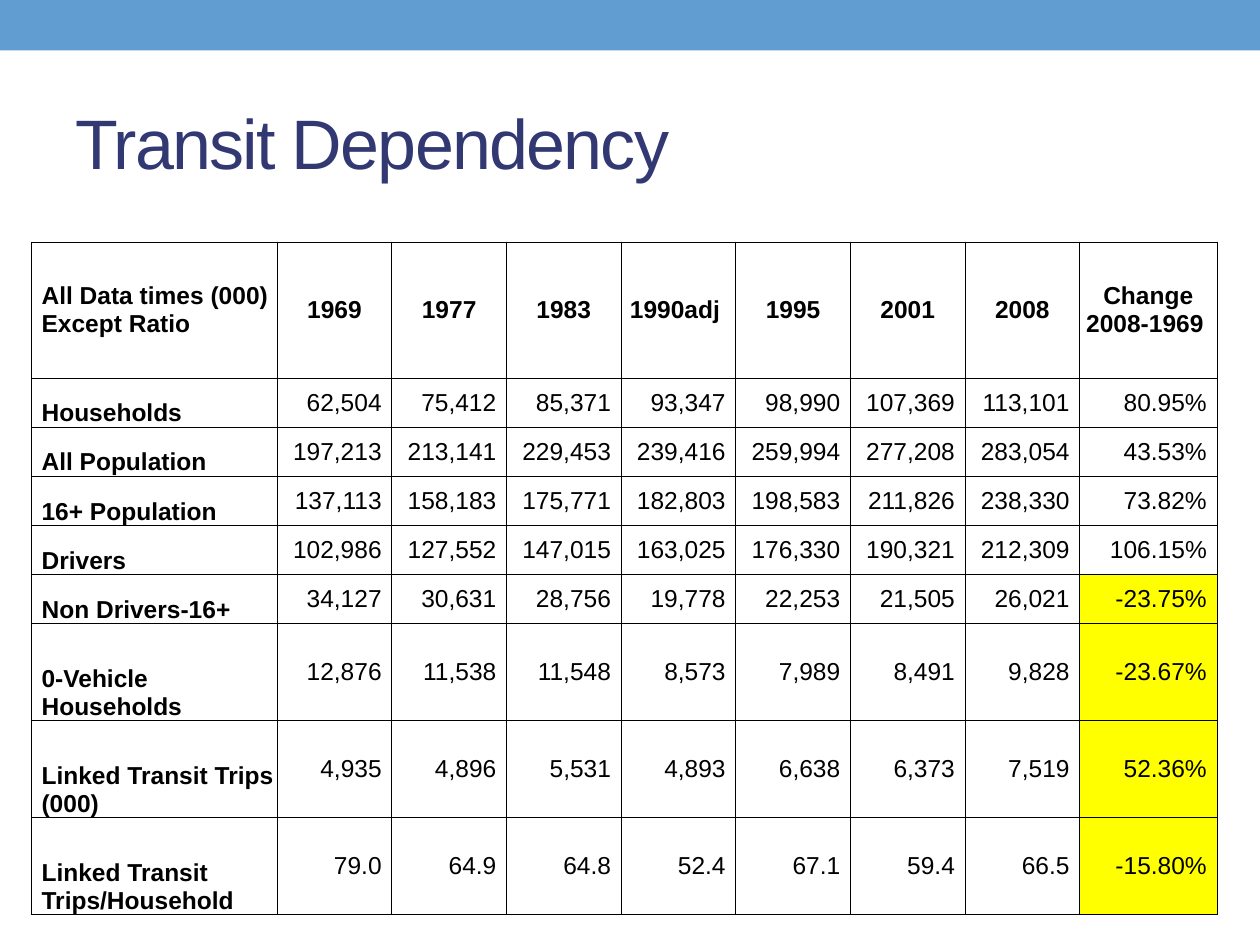
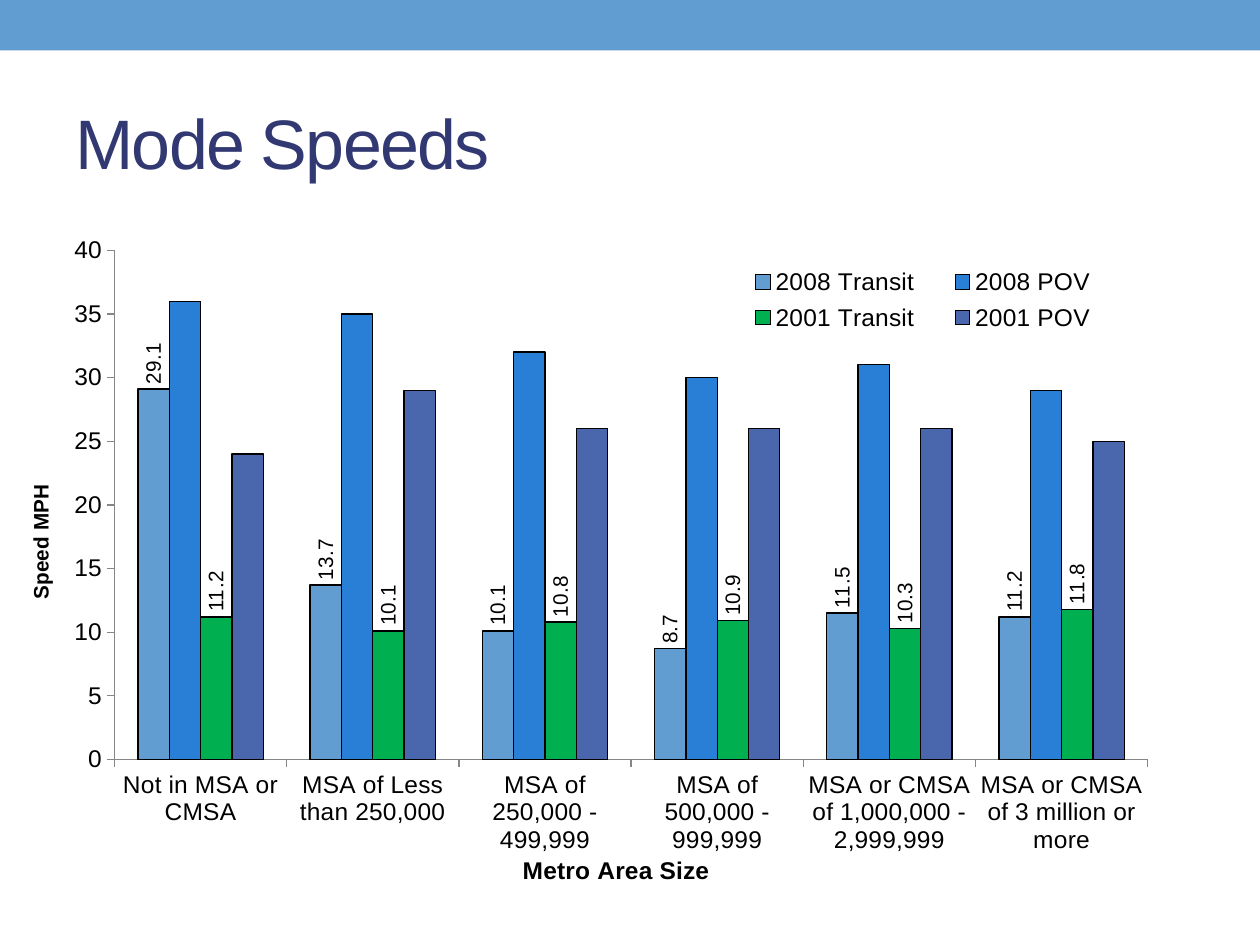
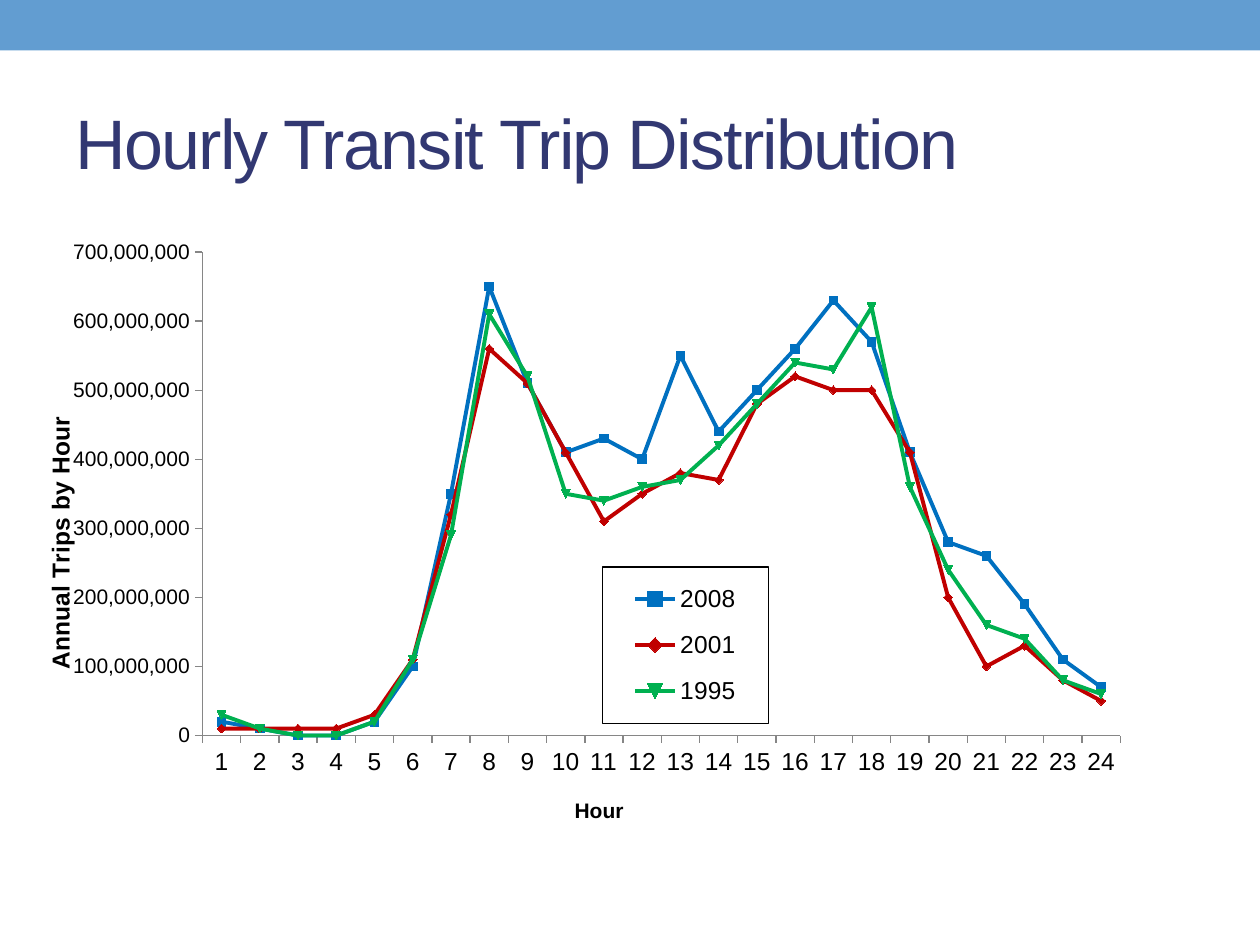
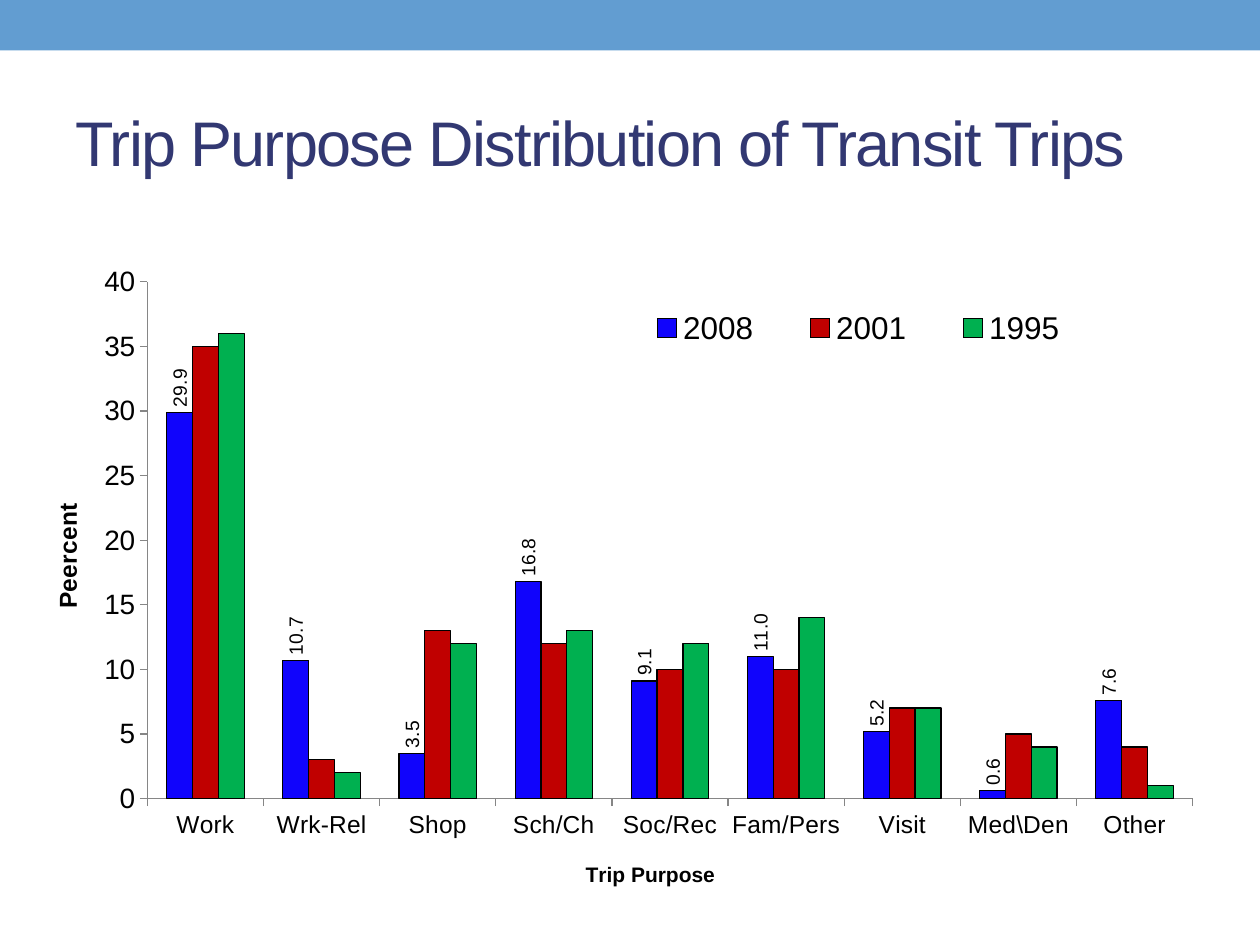
from dataclasses import dataclass
from typing import Any, Optional

from lxml import etree
from pptx import Presentation
from pptx.chart.data import CategoryChartData
from pptx.dml.color import RGBColor
from pptx.enum.chart import XL_CHART_TYPE, XL_LABEL_POSITION, XL_LEGEND_POSITION, XL_TICK_MARK
from pptx.enum.shapes import MSO_SHAPE
from pptx.enum.text import MSO_ANCHOR, PP_ALIGN
from pptx.oxml import parse_xml
from pptx.oxml.ns import nsdecls, qn
from pptx.util import Inches, Pt

COLUMNS = XL_CHART_TYPE.COLUMN_CLUSTERED
LINES = XL_CHART_TYPE.LINE_MARKERS
OUTSIDE_END = XL_LABEL_POSITION.OUTSIDE_END
LEGEND_RIGHT = XL_LEGEND_POSITION.RIGHT
TICK_OUT, TICK_NONE = XL_TICK_MARK.OUTSIDE, XL_TICK_MARK.NONE
RECT = MSO_SHAPE.RECTANGLE
MIDDLE, BOTTOM = MSO_ANCHOR.MIDDLE, MSO_ANCHOR.BOTTOM
LEFT, CENTER, RIGHT = PP_ALIGN.LEFT, PP_ALIGN.CENTER, PP_ALIGN.RIGHT
UPRIGHT = "-5400000"
MILLION = 1_000_000

Box = tuple[float, float, float, float]


@dataclass(frozen=True)
class Theme:
    font: str = "Arial"
    band: str = "629DD1"
    title: str = "323872"
    ink: str = "000000"
    paper: str = "FFFFFF"
    highlight: str = "FFFF00"
    axis: str = "868686"
    sky: str = "629DD1"
    blue: str = "297FD5"
    indigo: str = "4A66AC"
    green: str = "00B050"
    red: str = "C00000"
    ocean: str = "0070C0"
    violet: str = "1004FC"
    title_size: int = 40
    long_title_size: int = 36
    table_size: int = 14
    chart_size: int = 10


THEME = Theme()


@dataclass(frozen=True)
class Series:
    name: str
    color: str
    values: list[float]
    label_size: Optional[int] = None


@dataclass(frozen=True)
class Axis:
    title: str
    title_size: int
    title_at: tuple[float, float]  # percent of the chart
    label_size: int


@dataclass(frozen=True)
class ChartPlan:
    kind: Any
    at: Box  # inches
    plot: Box  # percent of the chart
    legend: Box  # percent of the chart
    legend_size: int
    cat_axis: Axis
    val_axis: Axis
    top: float
    step: float
    categories: list[str]
    series: list[Series]
    filled: bool = True
    boxed_legend: bool = False


# Shared helpers
def rgb(code: str) -> RGBColor:
    return RGBColor.from_string(code)


def apply(target: Any, formats: dict[str, Any]) -> None:
    for name, value in formats.items():
        setattr(target, name, value)


def style_font(font: Any, size: int, color: str = THEME.ink, bold: bool = False) -> None:
    apply(font, {"name": THEME.font, "size": Pt(size), "bold": bold})
    font.color.rgb = rgb(color)


def add_frame(prs: Any, title: str, size: int = THEME.title_size) -> Any:
    """Add a slide with the top band and the title."""
    s = prs.slides.add_slide(prs.slide_layouts[6])
    band = s.shapes.add_shape(RECT, 0, 0, prs.slide_width, Inches(0.4))
    band.shadow.inherit = False
    band.fill.solid()
    band.fill.fore_color.rgb = rgb(THEME.band)
    band.line.fill.background()

    sp = s.shapes.add_textbox(Inches(0.5), Inches(0.58), Inches(9), Inches(1.08))
    tf = sp.text_frame
    apply(tf, {"word_wrap": True, "vertical_anchor": MIDDLE})
    r = tf.paragraphs[0].add_run()
    r.text = title
    style_font(r.font, size, THEME.title)
    r.font._element.set("spc", "-100")
    return s


# Table
def add_borders(cell: Any) -> None:
    tc_pr = cell._tc.get_or_add_tcPr()
    for i, side in enumerate(("lnL", "lnR", "lnT", "lnB")):
        tc_pr.insert(i, parse_xml(
            f'<a:{side} {nsdecls("a")} w="6350"><a:solidFill>'
            f'<a:srgbClr val="{THEME.ink}"/></a:solidFill></a:{side}>'))


def fill_cell(cell: Any, text: str, row: int, col: int, highlight: bool) -> None:
    is_label, is_head = col == 0, row == 0
    is_number = not (is_label or is_head)
    apply(cell, {
        "margin_left": Inches(0.08 if is_label else 0),
        "margin_right": Inches(0.08 if is_number else 0),
        "margin_top": 0,
        "margin_bottom": 0,
        "vertical_anchor": BOTTOM if is_label and not is_head else MIDDLE,
    })
    p = cell.text_frame.paragraphs[0]
    p.alignment = LEFT if is_label else CENTER if is_head else RIGHT
    r = p.add_run()
    r.text = text
    style_font(r.font, THEME.table_size, bold=not is_number)
    if highlight:
        cell.fill.solid()
        cell.fill.fore_color.rgb = rgb(THEME.highlight)
    else:
        cell.fill.background()
    add_borders(cell)


def add_data_table(s: Any, rows: list[list[str]], widths: list[float],
                   heights: list[float], first_highlight: int) -> None:
    table = s.shapes.add_table(len(rows), len(widths), Inches(0.25), Inches(1.92),
                               Inches(sum(widths)), Inches(sum(heights))).table
    apply(table, {"first_row": False, "horz_banding": False})
    for column, width in zip(table.columns, widths):
        column.width = Inches(width)
    for i, (texts, height) in enumerate(zip(rows, heights)):
        table.rows[i].height = Inches(height)
        for j, text in enumerate(texts):
            highlight = i >= first_highlight and j == len(widths) - 1
            fill_cell(table.cell(i, j), text, i, j, highlight)


# Charts
def set_layout(parent: Any, index: int, percents: tuple[float, ...], inner: bool = False) -> None:
    """Place a chart part by hand; percents are x, y and, if given, w, h."""
    for old in parent.findall(qn("c:layout")):
        parent.remove(old)
    layout = parse_xml(f'<c:layout {nsdecls("c")}><c:manualLayout/></c:layout>')
    values = [("layoutTarget", "inner")] if inner else []
    values += [("xMode", "edge"), ("yMode", "edge")]
    values += [(name, str(round(pc / 100, 3))) for name, pc in zip("xywh", percents)]
    for name, value in values:
        etree.SubElement(layout[0], qn(f"c:{name}")).set("val", value)
    parent.insert(index, layout)


def shape_props(fill: Optional[str], line: Optional[str]) -> Any:
    def paint(code: Optional[str]) -> str:
        if code is None:
            return "<a:noFill/>"
        return f'<a:solidFill><a:srgbClr val="{code}"/></a:solidFill>'
    return parse_xml(f'<c:spPr {nsdecls("c", "a")}>{paint(fill)}'
                     f'<a:ln w="9525">{paint(line)}</a:ln></c:spPr>')


def style_axis(axis: Any, plan: Axis, upright: bool) -> None:
    apply(axis, {"has_major_gridlines": False, "has_minor_gridlines": False,
                 "major_tick_mark": TICK_OUT, "minor_tick_mark": TICK_NONE})
    style_font(axis.tick_labels.font, plan.label_size)
    axis.format.line.color.rgb = rgb(THEME.axis)
    axis.format.line.width = Pt(0.75)
    title = axis.axis_title
    tf = title.text_frame
    tf.text = plan.title
    style_font(tf.paragraphs[0].runs[0].font, plan.title_size, bold=True)
    if upright:
        body = tf._txBody.find(qn("a:bodyPr"))
        body.set("rot", UPRIGHT)
        body.set("vert", "horz")
    set_layout(title._element, 1, plan.title_at)


def style_series(ser: Any, plan: Series, is_line: bool) -> None:
    color = rgb(plan.color)
    if is_line:
        ser.smooth = False
        ser.format.line.color.rgb = color
        ser.marker.size = 5
        shades = [ser.marker.format.fill]
        ser.marker.format.line.color.rgb = color
    else:
        ser.invert_if_negative = False
        shades = [ser.format.fill]
        ser.format.line.color.rgb = rgb(THEME.ink)
        ser.format.line.width = Pt(0.75)
    for fill in shades:
        fill.solid()
        fill.fore_color.rgb = color
    if plan.label_size:
        labels = ser.data_labels
        apply(labels, {"show_value": True, "number_format": "#,##0.0",
                       "number_format_is_linked": False, "position": OUTSIDE_END})
        style_font(labels.font, plan.label_size)
        body = labels._element.find(qn("c:txPr")).find(qn("a:bodyPr"))
        body.set("rot", UPRIGHT)
        body.set("vert", "horz")


def add_data_chart(s: Any, plan: ChartPlan) -> None:
    data = CategoryChartData(number_format="General")
    data.categories = plan.categories
    for item in plan.series:
        data.add_series(item.name, item.values)
    chart = s.shapes.add_chart(plan.kind, *map(Inches, plan.at), data).chart
    chart.has_title = False
    style_font(chart.font, THEME.chart_size)
    paper = THEME.paper if plan.filled else None
    chart._chartSpace.find(qn("c:chart")).addnext(shape_props(paper, None))

    plot = chart.plots[0]
    plot.vary_by_categories = False
    is_line = plan.kind == LINES
    if not is_line:
        apply(plot, {"gap_width": 150, "overlap": 0})
    for ser, item in zip(plot.series, plan.series):
        style_series(ser, item, is_line)
    set_layout(chart._chartSpace.chart.plotArea, 0, plan.plot, inner=True)

    style_axis(chart.category_axis, plan.cat_axis, upright=False)
    style_axis(chart.value_axis, plan.val_axis, upright=True)
    apply(chart.value_axis, {"minimum_scale": 0, "maximum_scale": plan.top,
                             "major_unit": plan.step})
    apply(chart.value_axis.tick_labels, {"number_format": "#,##0",
                                         "number_format_is_linked": False})

    chart.has_legend = True
    legend = chart.legend
    apply(legend, {"position": LEGEND_RIGHT, "include_in_layout": False})
    style_font(legend.font, plan.legend_size)
    set_layout(legend._element, 1, plan.legend)
    if plan.boxed_legend:
        legend._element.find(qn("c:txPr")).addprevious(shape_props(THEME.paper, THEME.ink))


# Slide content
DEPENDENCY_ROWS = [line.split("|") for line in (
    "All Data times (000) Except Ratio|1969|1977|1983|1990adj |1995|2001|2008|Change 2008-1969 ",
    "Households|62,504|75,412|85,371|93,347|98,990|107,369|113,101|80.95%",
    "All Population|197,213|213,141|229,453|239,416|259,994|277,208|283,054|43.53%",
    "16+ Population|137,113|158,183|175,771|182,803|198,583|211,826|238,330|73.82%",
    "Drivers|102,986|127,552|147,015|163,025|176,330|190,321|212,309|106.15%",
    "Non Drivers-16+|34,127|30,631|28,756|19,778|22,253|21,505|26,021|-23.75%",
    "0-Vehicle Households|12,876|11,538|11,548|8,573|7,989|8,491|9,828|-23.67%",
    "Linked Transit Trips (000)|4,935|4,896|5,531|4,893|6,638|6,373|7,519|52.36%",
    "Linked Transit Trips/Household|79.0|64.9|64.8|52.4|67.1|59.4|66.5|-15.80%",
)]
DEPENDENCY_WIDTHS = [1.95] + [0.91] * 7 + [1.09]
DEPENDENCY_HEIGHTS = [1.08] + [0.39] * 5 + [0.77] * 3

MODE_SPEEDS = ChartPlan(
    kind=COLUMNS, at=(0.04, 1.75, 9.34, 5.33),
    plot=(9.3, 4.5, 87.8, 76.9), legend=(61, 6, 34, 12), legend_size=14,
    cat_axis=Axis("Metro Area Size", 14, (43.6, 95.1), 14),
    val_axis=Axis("Speed MPH", 12, (1.6, 39.5), 14),
    top=40, step=5,
    categories=["Not in MSA or CMSA", "MSA of Less than 250,000",
                "MSA of 250,000 - 499,999", "MSA of 500,000 - 999,999",
                "MSA or CMSA of 1,000,000 - 2,999,999",
                "MSA or CMSA of 3 million or more"],
    series=[
        Series("2008 Transit", THEME.sky, [29.1, 13.7, 10.1, 8.7, 11.5, 11.2], 12),
        Series("2008 POV", THEME.blue, [36, 35, 32, 30, 31, 29]),
        Series("2001 Transit", THEME.green, [11.2, 10.1, 10.8, 10.9, 10.3, 11.8], 12),
        Series("2001 POV", THEME.indigo, [24, 29, 26, 26, 26, 25]),
    ])


def millions(*values: int) -> list[float]:
    return [value * MILLION for value in values]


HOURLY_TRIPS = ChartPlan(
    kind=LINES, at=(0, 1.75, 9.34, 4.92),
    plot=(17.2, 5.1, 78, 78), legend=(51.2, 55.9, 14.1, 25.2), legend_size=14,
    cat_axis=Axis("Hour", 12, (48.5, 92.5), 14),
    val_axis=Axis("Annual Trips by Hour", 14, (3.4, 30.9), 12),
    top=700 * MILLION, step=100 * MILLION,
    categories=[str(hour) for hour in range(1, 25)],
    series=[
        Series("2008", THEME.ocean, millions(
            20, 10, 0, 0, 20, 100, 350, 650, 510, 410, 430, 400,
            550, 440, 500, 560, 630, 570, 410, 280, 260, 190, 110, 70)),
        Series("2001", THEME.red, millions(
            10, 10, 10, 10, 30, 110, 320, 560, 510, 410, 310, 350,
            380, 370, 480, 520, 500, 500, 410, 200, 100, 130, 80, 50)),
        Series("1995", THEME.green, millions(
            30, 10, 0, 0, 20, 110, 290, 610, 520, 350, 340, 360,
            370, 420, 480, 540, 530, 620, 360, 240, 160, 140, 80, 60)),
    ],
    boxed_legend=True)

TRIP_PURPOSES = ChartPlan(
    kind=COLUMNS, at=(0.25, 1.83, 9.58, 5.42),
    plot=(9.6, 7.5, 86.6, 75.7), legend=(48, 10.5, 41, 7.5), legend_size=18,
    cat_axis=Axis("Trip Purpose", 12, (45.6, 91.8), 14),
    val_axis=Axis("Peercent", 14, (1.3, 39.3), 16),
    top=40, step=5,
    categories=["Work", "Wrk-Rel", "Shop", "Sch/Ch", "Soc/Rec", "Fam/Pers",
                "Visit", "Med\\Den", "Other"],
    series=[
        Series("2008", THEME.violet, [29.9, 10.7, 3.5, 16.8, 9.1, 11, 5.2, 0.6, 7.6], 11),
        Series("2001", THEME.red, [35, 3, 13, 12, 10, 10, 7, 5, 4]),
        Series("1995", THEME.green, [36, 2, 12, 13, 12, 14, 7, 4, 1]),
    ],
    filled=False)


def main() -> None:
    prs = Presentation()
    apply(prs, {"slide_width": Inches(10), "slide_height": Inches(7.5)})

    s = add_frame(prs, "Transit Dependency")
    add_data_table(s, DEPENDENCY_ROWS, DEPENDENCY_WIDTHS, DEPENDENCY_HEIGHTS, first_highlight=5)

    add_data_chart(add_frame(prs, "Mode Speeds"), MODE_SPEEDS)
    add_data_chart(add_frame(prs, "Hourly Transit Trip Distribution"), HOURLY_TRIPS)
    add_data_chart(add_frame(prs, "Trip Purpose Distribution of Transit Trips",
                             THEME.long_title_size), TRIP_PURPOSES)

    prs.save("out.pptx")


if __name__ == "__main__":
    main()
